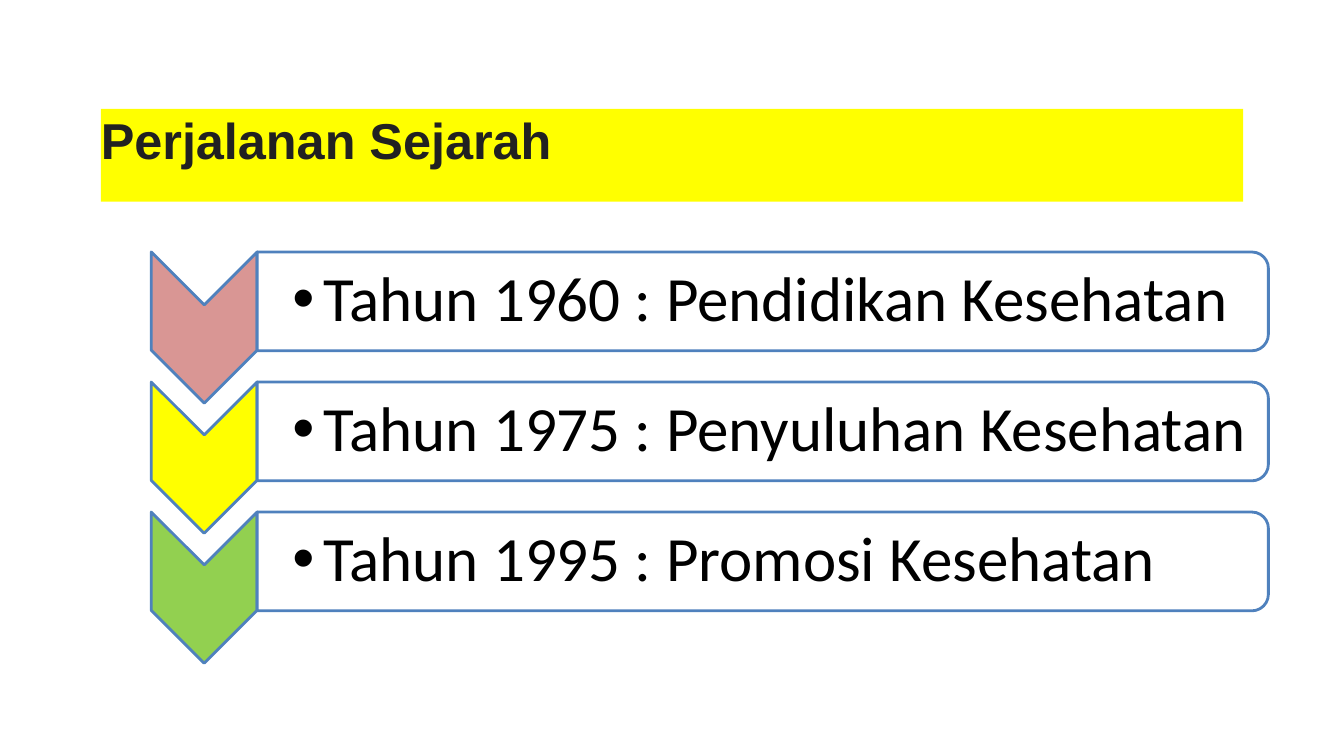
from dataclasses import dataclass

from lxml.etree import SubElement
from pptx import Presentation
from pptx.dml.color import RGBColor
from pptx.enum.shapes import MSO_SHAPE
from pptx.enum.text import MSO_ANCHOR, PP_ALIGN
from pptx.oxml.ns import qn
from pptx.util import Inches, Pt


@dataclass(frozen=True)
class Theme:
    banner: str = "FFFF00"
    heading: str = "212121"
    body: str = "000000"
    panel: str = "FFFFFF"
    outline: str = "4F81BD"
    outline_width: float = 2
    heading_font: str = "Arial"
    body_font: str = "Calibri"
    heading_size: int = 36
    body_size: int = 45


THEME = Theme()
MILESTONES = [
    ("Tahun 1960 : Pendidikan Kesehatan", "D99694"),
    ("Tahun 1975 : Penyuluhan Kesehatan", "FFFF00"),
    ("Tahun 1995 : Promosi Kesehatan", "92D050"),
]
ROW_PITCH = 1.29
CHEVRON_WIDTH, CHEVRON_HEIGHT = 1.05, 1.5
PANEL_HEIGHT = 0.98


def set_insets(frame, left, other):
    frame.margin_left = Inches(left)
    frame.margin_top = frame.margin_right = frame.margin_bottom = Inches(other)


def add_run(paragraph, text, font_name, size, color, bold=False):
    run = paragraph.add_run()
    run.text = text
    run.font.name = font_name
    run.font.size = Pt(size)
    run.font.bold = bold
    run.font.color.rgb = RGBColor.from_string(color)


def add_bullet(paragraph, indent):
    properties = paragraph._p.get_or_add_pPr()
    properties.set("marL", str(Inches(indent)))
    properties.set("indent", str(-Inches(indent)))
    SubElement(properties, qn("a:buFont"), typeface="Arial")
    SubElement(properties, qn("a:buChar"), char="•")


def add_turned_shape(slide, kind, left, top, width, height, fill):
    """Add a shape turned by 90 degrees that covers the given box on the slide."""
    shift = (width - height) / 2
    shape = slide.shapes.add_shape(kind, Inches(left + shift), Inches(top - shift),
                                   Inches(height), Inches(width))
    shape.rotation = 90
    shape.shadow.inherit = False
    shape.fill.solid()
    shape.fill.fore_color.rgb = RGBColor.from_string(fill)
    shape.line.color.rgb = RGBColor.from_string(THEME.outline)
    shape.line.width = Pt(THEME.outline_width)


def add_heading(slide, left, top, width, height):
    banner = slide.shapes.add_textbox(Inches(left), Inches(top), Inches(width), Inches(height))
    banner.fill.solid()
    banner.fill.fore_color.rgb = RGBColor.from_string(THEME.banner)
    frame = banner.text_frame
    frame.word_wrap = True
    frame.vertical_anchor = MSO_ANCHOR.TOP
    set_insets(frame, 0, 0)
    add_run(frame.paragraphs[0], "Perjalanan Sejarah", THEME.heading_font,
            THEME.heading_size, THEME.heading, bold=True)


def add_milestone(slide, left, top, width, label, color):
    panel_left = left + CHEVRON_WIDTH
    panel_width = width - CHEVRON_WIDTH
    add_turned_shape(slide, MSO_SHAPE.CHEVRON, left, top,
                     CHEVRON_WIDTH, CHEVRON_HEIGHT, color)
    add_turned_shape(slide, MSO_SHAPE.ROUND_2_SAME_RECTANGLE, panel_left, top,
                     panel_width, PANEL_HEIGHT, THEME.panel)

    margin = 0.05
    caption = slide.shapes.add_textbox(Inches(panel_left), Inches(top + margin),
                                       Inches(panel_width - margin),
                                       Inches(PANEL_HEIGHT - 2 * margin))
    frame = caption.text_frame
    frame.word_wrap = True
    frame.vertical_anchor = MSO_ANCHOR.MIDDLE
    set_insets(frame, 0.35, 0.03)
    paragraph = frame.paragraphs[0]
    paragraph.alignment = PP_ALIGN.LEFT
    paragraph.line_spacing = 0.9
    add_bullet(paragraph, 0.31)
    add_run(paragraph, label, THEME.body_font, THEME.body_size, THEME.body)


def add_timeline(slide, left, top, width):
    for row, (label, color) in enumerate(MILESTONES):
        add_milestone(slide, left, top + row * ROW_PITCH, width, label, color)


def main():
    presentation = Presentation()
    presentation.slide_width = Inches(13.33)
    presentation.slide_height = Inches(7.5)
    slide = presentation.slides.add_slide(presentation.slide_layouts[6])
    add_heading(slide, 1, 1.08, 11.33, 0.92)
    add_timeline(slide, 1.5, 2.5, 11.08)
    presentation.save("out.pptx")


if __name__ == "__main__":
    main()
